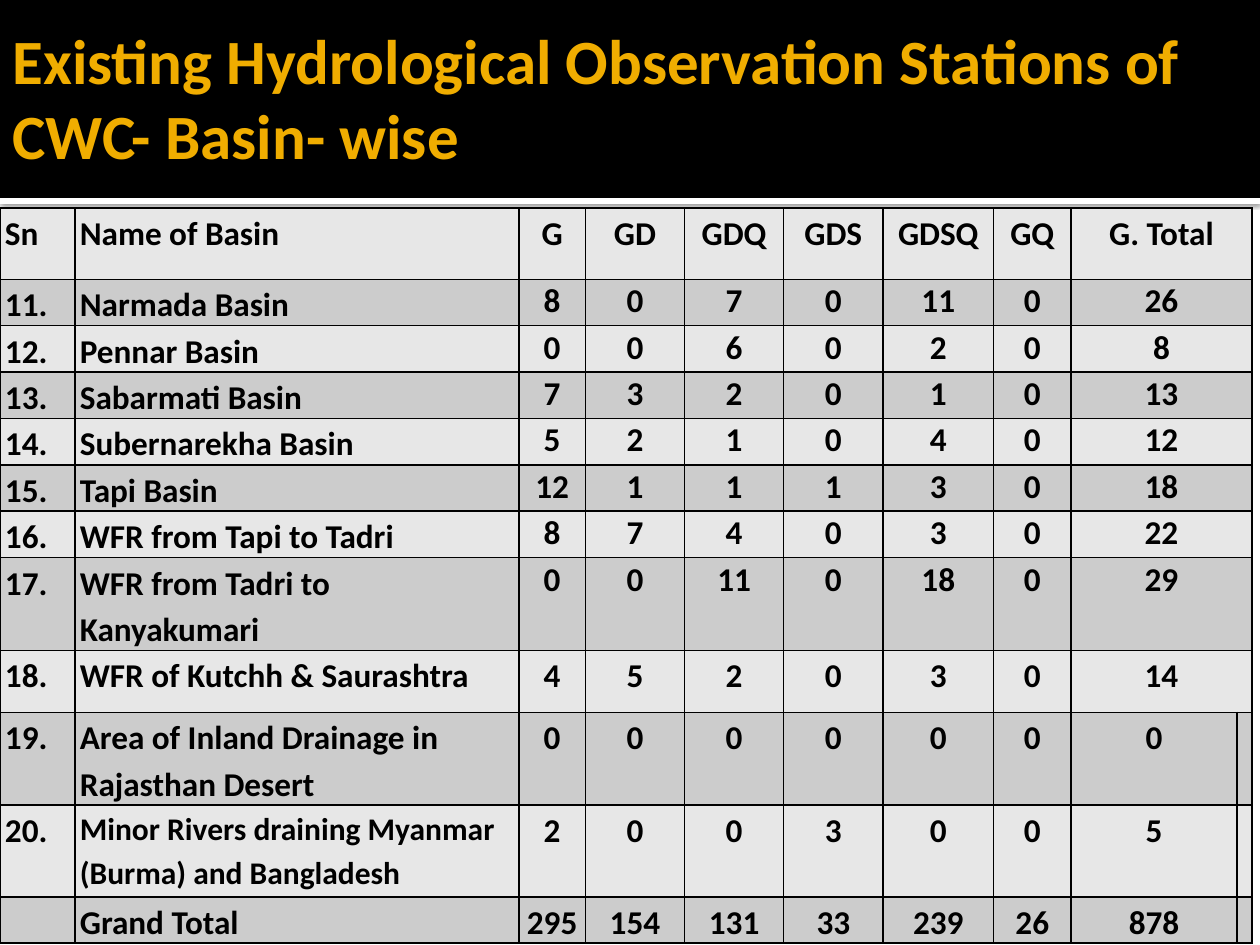
import pptx
import pptx.util
import pptx.dml.color
import pptx.enum.shapes
import pptx.enum.text
import pptx.oxml
import pptx.oxml.ns
from pptx.util import Cm
import lxml.etree

COLOURS = {"black": "000000", "white": "FFFFFF", "gold": "F0AD00",
           "light": "E7E7E7", "dark": "CCCCCC"}
FONT = "Calibri"
COLUMN_WIDTHS = [1.51, 8.95, 1.34, 2.0, 2.0, 2.0, 2.23, 1.56, 3.35, 0.22]
ROW_HEIGHTS = [1.44] + [0.89] * 6 + [1.75, 1.25, 1.75, 1.85, 0.89]
BASINS = [
    ("Sn", "Name of Basin", "G", "GD", "GDQ", "GDS", "GDSQ", "GQ", "G. Total"),
    ("11.", "Narmada Basin", 8, 0, 7, 0, 11, 0, 26),
    ("12.", "Pennar Basin", 0, 0, 6, 0, 2, 0, 8),
    ("13.", "Sabarmati Basin", 7, 3, 2, 0, 1, 0, 13),
    ("14.", "Subernarekha Basin", 5, 2, 1, 0, 4, 0, 12),
    ("15.", "Tapi Basin", 12, 1, 1, 1, 3, 0, 18),
    ("16.", "WFR from Tapi to Tadri", 8, 7, 4, 0, 3, 0, 22),
    ("17.", "WFR from Tadri to Kanyakumari", 0, 0, 11, 0, 18, 0, 29),
    ("18.", "WFR of Kutchh & Saurashtra", 4, 5, 2, 0, 3, 0, 14),
    ("19.", "Area of Inland Drainage in Rajasthan Desert", 0, 0, 0, 0, 0, 0, 0),
    ("20.", "Minor Rivers draining Myanmar (Burma) and Bangladesh", 2, 0, 0, 3, 0, 0, 5),
    ("", "Grand Total", 295, 154, 131, 33, 239, 26, 878),
]
LAST_MERGED_ROW = 8
TIGHT_ROWS = range(1, 8)
SMALL_NAME_ROW = 10


def colour(name):
    return pptx.dml.color.RGBColor.from_string(COLOURS[name])


def add_span(para, text, size, shade):
    span = para.add_run()
    span.text = text
    span.font.name = FONT
    span.font.size = pptx.util.Pt(size)
    span.font.bold = True
    span.font.color.rgb = colour(shade)


def add_band(page, left, top, width, height, shade):
    band = page.shapes.add_shape(pptx.enum.shapes.MSO_SHAPE.RECTANGLE,
                                 left, top, width, height)
    band.shadow.inherit = False
    band.fill.solid()
    band.fill.fore_color.rgb = colour(shade)
    band.line.fill.background()
    return band


def add_shadow(band):
    effects = band._element.spPr.find(pptx.oxml.ns.qn("a:effectLst"))
    effects.append(pptx.oxml.parse_xml(
        f'<a:outerShdw {pptx.oxml.ns.nsdecls("a")} blurRad="31750" dist="10160" '
        f'dir="5400000" algn="tl" rotWithShape="0"><a:srgbClr val="{COLOURS["black"]}">'
        '<a:alpha val="60000"/></a:srgbClr></a:outerShdw>'))


def place_header(page, left, top, width, height):
    rule = add_band(page, left, top + height, width, Cm(0.12), "white")
    add_shadow(rule)
    add_band(page, left, top, width, height, "black")


def place_title(page, left, top, width, height):
    title = page.shapes.title
    title.left, title.top, title.width, title.height = left, top, width, height
    frame = title.text_frame
    frame.word_wrap = True
    frame.auto_size = pptx.enum.text.MSO_AUTO_SIZE.NONE
    frame.vertical_anchor = pptx.enum.text.MSO_ANCHOR.MIDDLE
    frame.margin_left = Cm(0.25)
    frame.margin_right = frame.margin_top = frame.margin_bottom = Cm(0.13)
    para = frame.paragraphs[0]
    para.alignment = pptx.enum.text.PP_ALIGN.LEFT
    add_span(para, "Existing Hydrological Observation Stations of CWC- Basin- wise",
             36, "gold")
    page.shapes._spTree.append(title._element)


def add_borders(cell):
    properties = cell._tc.get_or_add_tcPr()
    for index, side in enumerate(("lnL", "lnR", "lnT", "lnB")):
        properties.insert(index, pptx.oxml.parse_xml(
            f'<a:{side} {pptx.oxml.ns.nsdecls("a")} w="12700"><a:solidFill>'
            f'<a:srgbClr val="{COLOURS["black"]}"/></a:solidFill></a:{side}>'))


def format_cell(cell, text, row, column):
    cell.margin_left = cell.margin_right = Cm(0.1)
    cell.margin_top = cell.margin_bottom = 0
    cell.fill.solid()
    cell.fill.fore_color.rgb = colour("dark" if row % 2 else "light")
    add_borders(cell)
    para = cell.text_frame.paragraphs[0]
    if not text:
        para.font.size = pptx.util.Pt(12)
        return
    is_count = column > 1
    para.alignment = (pptx.enum.text.PP_ALIGN.CENTER if is_count
                      else pptx.enum.text.PP_ALIGN.LEFT)
    para.line_spacing = 1.05 if is_count and row in TIGHT_ROWS else 1.15
    para.space_after = pptx.util.Pt(10)
    size = 18 if (row, column) == (SMALL_NAME_ROW, 1) else 19
    add_span(para, text, size, "black")


def place_basin_table(page, left, top):
    frame = page.shapes.add_table(len(ROW_HEIGHTS), len(COLUMN_WIDTHS), left, top,
                                  Cm(sum(COLUMN_WIDTHS)), Cm(sum(ROW_HEIGHTS)))
    table = frame.table
    for column, width in zip(table.columns, COLUMN_WIDTHS):
        column.width = Cm(width)
    for row, height in zip(table.rows, ROW_HEIGHTS):
        row.height = Cm(height)
    for row, values in enumerate(BASINS):
        for column, value in enumerate(values + ("",)):
            format_cell(table.cell(row, column), str(value), row, column)
        if row <= LAST_MERGED_ROW:
            table.cell(row, 8).merge(table.cell(row, 9))


def main():
    deck = pptx.Presentation()
    deck.slide_width, deck.slide_height = Cm(25.4), Cm(19.05)
    page = deck.slides.add_slide(deck.slide_layouts[5])
    place_header(page, 0, 0, deck.slide_width, Cm(3.99))
    place_basin_table(page, 0, Cm(4.19))
    place_title(page, 0, 0, deck.slide_width, Cm(3.91))
    deck.save("out.pptx")


if __name__ == "__main__":
    main()
